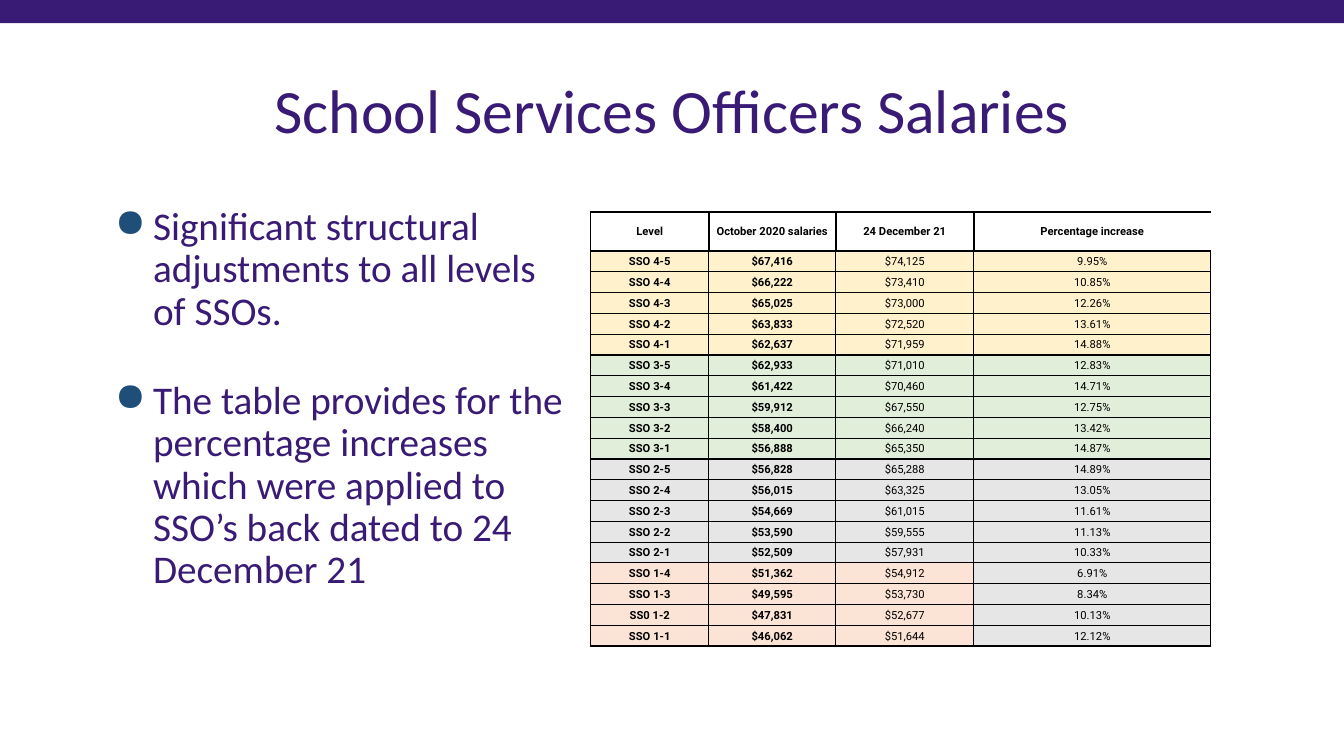
import pptx
import pptx.util
import pptx.dml.color
import pptx.enum.shapes
import pptx.enum.text
import pptx.oxml.ns
from lxml import etree

Inches, Pt = pptx.util.Inches, pptx.util.Pt
RGB = pptx.dml.color.RGBColor.from_string
qn = pptx.oxml.ns.qn
ALIGN = pptx.enum.text.PP_ALIGN
ANCHOR = pptx.enum.text.MSO_ANCHOR

# Content
TITLE = "School Services Officers Salaries"
POINTS = [
    "Significant structural adjustments to all levels of SSOs.",
    "The table provides for the percentage increases which were applied to "
    "SSO’s back dated to 24 December 21",
]
HEADINGS = ("Level", "October 2020 salaries", "24 December 21", "Percentage increase")
BANDS = [
    ("level 4", [
        ("SSO 4-5", "$67,416", "$74,125", "9.95%"),
        ("SSO 4-4", "$66,222", "$73,410", "10.85%"),
        ("SSO 4-3", "$65,025", "$73,000", "12.26%"),
        ("SSO 4-2", "$63,833", "$72,520", "13.61%"),
        ("SSO 4-1", "$62,637", "$71,959", "14.88%"),
    ]),
    ("level 3", [
        ("SSO 3-5", "$62,933", "$71,010", "12.83%"),
        ("SSO 3-4", "$61,422", "$70,460", "14.71%"),
        ("SSO 3-3", "$59,912", "$67,550", "12.75%"),
        ("SSO 3-2", "$58,400", "$66,240", "13.42%"),
        ("SSO 3-1", "$56,888", "$65,350", "14.87%"),
    ]),
    ("level 2", [
        ("SSO 2-5", "$56,828", "$65,288", "14.89%"),
        ("SSO 2-4", "$56,015", "$63,325", "13.05%"),
        ("SSO 2-3", "$54,669", "$61,015", "11.61%"),
        ("SSO 2-2", "$53,590", "$59,555", "11.13%"),
        ("SSO 2-1", "$52,509", "$57,931", "10.33%"),
    ]),
    ("level 1", [
        ("SSO 1-4", "$51,362", "$54,912", "6.91%"),
        ("SSO 1-3", "$49,595", "$53,730", "8.34%"),
        ("SS0 1-2", "$47,831", "$52,677", "10.13%"),
        ("SSO 1-1", "$46,062", "$51,644", "12.12%"),
    ]),
]

THEME = {
    "purple": "391B76", "bullet": "1F4E79", "ink": "000000",
    "level 4": "FFF1CC", "level 3": "E1EEDA", "level 2": "E7E6E6", "level 1": "FBE3D5",
    "font": "Calibri", "table font": "Roboto",
    "title size": 44, "point size": 28, "table size": 8,
}

# Layout in inches
TABLE_LEFT, TABLE_TOP, TABLE_HEIGHT = 5.86, 2.1, 4.31
COLUMN_WIDTHS = (1.17, 1.26, 1.37, 2.35)
HEADING_HEIGHT = 0.39
THIN, THICK = 1, 1.5
NO_STYLE = "{2D5ABB26-0587-4C30-8999-92F81FD0307C}"


def style_font(font, face, size, color, bold=False):
    font.name, font.size, font.bold = face, Pt(size), bold
    font.color.rgb = RGB(color)


def text_frame(slide, left, top, width, height):
    box = slide.shapes.add_textbox(Inches(left), Inches(top), Inches(width), Inches(height))
    box.text_frame.word_wrap = True
    return box.text_frame


def add_bullet(paragraph):
    props = paragraph._p.get_or_add_pPr()
    props.set("marL", str(Inches(0.5)))
    props.set("indent", str(Inches(-0.38)))
    color = etree.SubElement(props, qn("a:buClr"))
    etree.SubElement(color, qn("a:srgbClr"), val=THEME["bullet"])
    etree.SubElement(props, qn("a:buChar"), char="●")


def add_borders(cell, widths):
    props = cell._tc.get_or_add_tcPr()
    for side, width in zip("LRTB", widths):
        if width:
            line = etree.SubElement(props, qn(f"a:ln{side}"), w=str(Pt(width)))
            fill = etree.SubElement(line, qn("a:solidFill"))
            etree.SubElement(fill, qn("a:srgbClr"), val=THEME["ink"])


def fill_cell(cell, text, bold, borders, color=None):
    cell.margin_left = cell.margin_right = cell.margin_top = Inches(0.01)
    cell.margin_bottom = 0
    cell.vertical_anchor = ANCHOR.MIDDLE
    add_borders(cell, borders)
    if color:
        cell.fill.solid()
        cell.fill.fore_color.rgb = RGB(color)
    else:
        cell.fill.background()
    cell.text_frame.text = text
    paragraph = cell.text_frame.paragraphs[0]
    paragraph.alignment = ALIGN.CENTER
    style_font(paragraph.runs[0].font, THEME["table font"], THEME["table size"],
               THEME["ink"], bold)


def add_header(slide):
    strip = slide.shapes.add_shape(pptx.enum.shapes.MSO_SHAPE.RECTANGLE,
                                   0, 0, Inches(13.35), Inches(0.23))
    strip.shadow.inherit = False
    strip.fill.solid()
    strip.fill.fore_color.rgb = RGB(THEME["purple"])
    strip.line.fill.background()

    title = text_frame(slide, 0.92, 0.4, 11.5, 1.45)
    title.vertical_anchor = ANCHOR.MIDDLE
    title.text = TITLE
    heading = title.paragraphs[0]
    heading.alignment = ALIGN.CENTER
    heading.line_spacing = 0.9
    style_font(heading.runs[0].font, THEME["font"], THEME["title size"], THEME["purple"])


def add_points(slide):
    points = text_frame(slide, 0.92, 2, 4.77, 4.76)
    points.text = "\n".join(POINTS)
    for index, point in enumerate(points.paragraphs):
        point.line_spacing = 0.9
        if index:
            point.space_before = Pt(33.5)
        add_bullet(point)
        style_font(point.runs[0].font, THEME["font"], THEME["point size"], THEME["purple"])


def add_salaries(slide):
    rows = [(band, row) for band, band_rows in BANDS for row in band_rows]
    frame = slide.shapes.add_table(
        len(rows) + 1, len(HEADINGS), Inches(TABLE_LEFT), Inches(TABLE_TOP),
        Inches(sum(COLUMN_WIDTHS)), Inches(TABLE_HEIGHT))
    salaries = frame.table
    salaries.first_row = salaries.horz_banding = False
    salaries._tbl.tblPr.find(qn("a:tableStyleId")).text = NO_STYLE

    for column, width in zip(salaries.columns, COLUMN_WIDTHS):
        column.width = Inches(width)
    row_height = (TABLE_HEIGHT - HEADING_HEIGHT) / len(rows)
    for index, row in enumerate(salaries.rows):
        row.height = Inches(row_height if index else HEADING_HEIGHT)

    # Heading row: open on the right, thin at the left
    last = len(HEADINGS) - 1
    for col, text in enumerate(HEADINGS):
        borders = (THICK if col else THIN, THICK if col < last else 0,
                   THICK, THICK if col else THIN)
        fill_cell(salaries.cell(0, col), text, True, borders)

    # Salary rows: the increase column keeps the level 2 shade in level 1
    for index, (band, row) in enumerate(rows, start=1):
        for col, text in enumerate(row):
            shade = "level 2" if band == "level 1" and col == last else band
            top = THICK if index == 1 and col else THIN
            fill_cell(salaries.cell(index, col), text, col < 2,
                      (THIN, THIN, top, THIN), THEME[shade])


def main():
    deck = pptx.Presentation()
    deck.slide_width, deck.slide_height = Inches(13.33), Inches(7.5)
    slide = deck.slides.add_slide(deck.slide_layouts[6])
    add_header(slide)
    add_points(slide)
    add_salaries(slide)
    deck.save("out.pptx")


if __name__ == "__main__":
    main()
